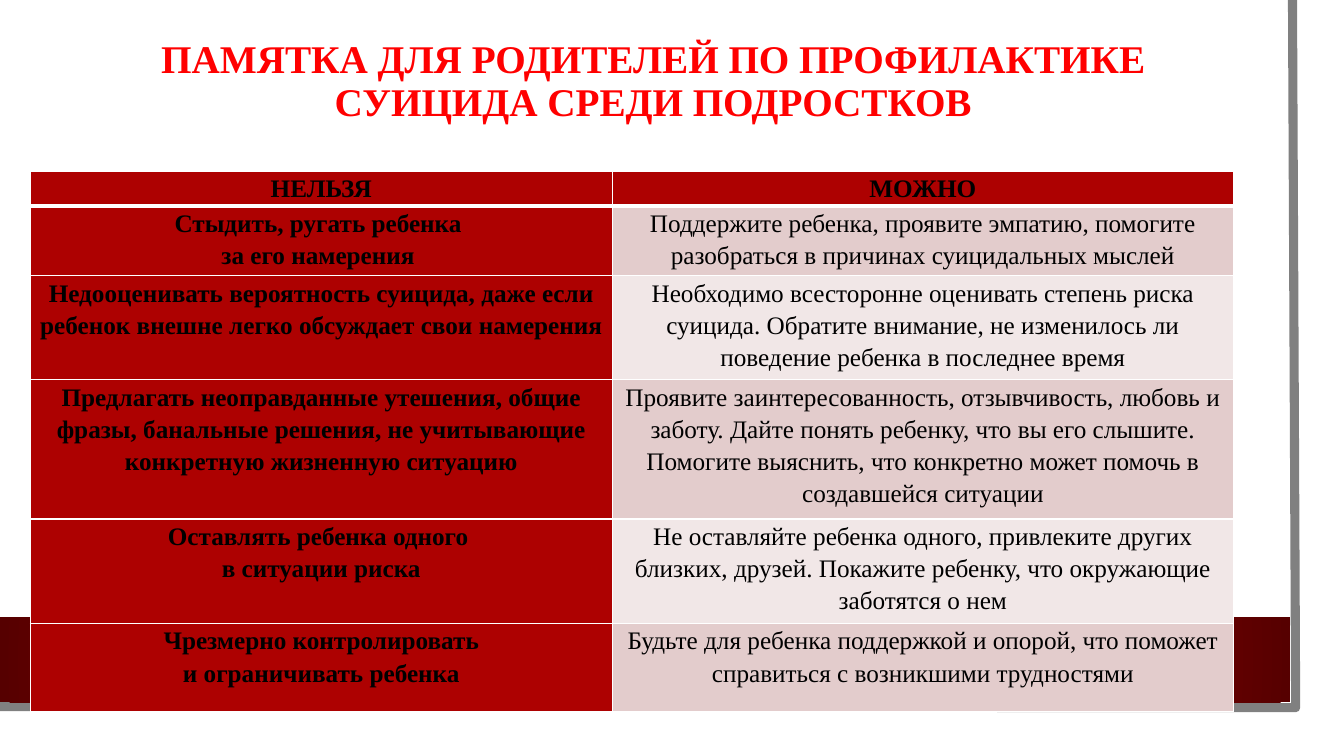
from dataclasses import dataclass

from lxml.etree import SubElement
from pptx import Presentation
from pptx.dml.color import RGBColor
from pptx.enum.shapes import MSO_SHAPE
from pptx.enum.text import MSO_ANCHOR, PP_ALIGN
from pptx.oxml import parse_xml
from pptx.oxml.ns import nsdecls, qn
from pptx.util import Pt

PX = 9525
FONT = "Times New Roman"
RED, DARK, WHITE = "AD0101", "560000", "FFFFFF"
BANDS = ("E3CCCC", "F1E7E7")
WIDTHS = (554, 592)
HIGH = 501


@dataclass
class Row:
    height: int
    avoid: str
    advise: str


HEAD = Row(28, "НЕЛЬЗЯ", "МОЖНО")
ROWS = [
    Row(60, "Стыдить, ругать ребенка \nза его намерения ",
        "Поддержите ребенка, проявите эмпатию, помогите разобраться "
        "в причинах суицидальных мыслей"),
    Row(49, "Недооценивать вероятность суицида, даже если ребенок внешне "
        "легко обсуждает свои намерения",
        "Необходимо всесторонне оценивать степень риска суицида. Обратите "
        "внимание, не изменилось ли поведение ребенка в последнее время"),
    Row(54, "Предлагать неоправданные утешения, общие фразы, банальные "
        "решения, не учитывающие конкретную жизненную ситуацию",
        "Проявите заинтересованность, отзывчивость, любовь и заботу. Дайте "
        "понять ребенку, что вы его слышите. Помогите выяснить, что "
        "конкретно может помочь в создавшейся ситуации"),
    Row(50, "Оставлять ребенка одного \nв ситуации риска",
        "Не оставляйте ребенка одного, привлеките других близких, друзей. "
        "Покажите ребенку, что окружающие заботятся о нем"),
    Row(84, "Чрезмерно контролировать\nи ограничивать ребенка",
        "Будьте для ребенка поддержкой и опорой, что поможет справиться "
        "с возникшими трудностями"),
]


def px(*sizes: int) -> list[int]:
    return [size * PX for size in sizes]


def rgb(code: str) -> RGBColor:
    return RGBColor.from_string(code)


def style(frame, size: int, color: str, bold: bool, gap: float) -> None:
    frame.word_wrap = True
    for para in frame.paragraphs:
        para.alignment = PP_ALIGN.CENTER
        para.line_spacing = gap
        for run in para.runs:
            font = run.font
            font.name, font.size, font.bold = FONT, Pt(size), bold
            font.color.rgb = rgb(color)


def edge(cell, sides: dict[str, int]) -> None:
    """Draw white cell borders; sides maps L, R, T, B to points."""
    props = cell._tc.get_or_add_tcPr()
    for spot, (side, width) in enumerate(sides.items()):
        props.insert(spot, parse_xml(
            f'<a:ln{side} {nsdecls("a")} w="{Pt(width)}"><a:solidFill>'
            f'<a:srgbClr val="{WHITE}"/></a:solidFill></a:ln{side}>'))


def draw_frame(slide) -> None:
    """Draw the grey edge at the right and bottom and the red band."""
    pen = slide.shapes.build_freeform(1231, 0, scale=PX)
    pen.add_line_segments([(1234, 674), (0, 673)], close=False)
    rim = pen.convert_to_shape()
    rim.shadow.inherit = False
    rim.fill.background()
    rim.line.color.rgb = rgb("808080")
    rim.line.width = Pt(6.5)

    band = slide.shapes.add_shape(MSO_SHAPE.RECTANGLE, *px(0, 588, 1229, 81))
    band.shadow.inherit = False
    band.line.fill.background()
    band.fill.gradient()
    for stop, place, color in zip(band.fill.gradient_stops, (0.34, 1), (RED, DARK)):
        stop.position = place
        stop.color.rgb = rgb(color)
    grad = band._element.spPr.find(qn("a:gradFill"))
    grad.remove(grad.find(qn("a:lin")))
    ring = SubElement(grad, qn("a:path"), {"path": "circle"})
    SubElement(ring, qn("a:fillToRect"), dict.fromkeys("ltrb", "50000"))


def draw_title(slide) -> None:
    frame = slide.shapes.add_textbox(*px(76, 36, 1092, 90)).text_frame
    frame.margin_top = 2 * PX
    frame.text = "ПАМЯТКА ДЛЯ РОДИТЕЛЕЙ ПО ПРОФИЛАКТИКЕ СУИЦИДА СРЕДИ ПОДРОСТКОВ"
    style(frame, 28, "FF0000", True, 0.9)


def draw_table(slide) -> None:
    rows = [HEAD, *ROWS]
    holder = slide.shapes.add_table(
        len(rows), 2, *px(29, 163, sum(WIDTHS), HIGH))
    table = holder.table
    for col, width in zip(table.columns, WIDTHS):
        col.width = width * PX
    for i, row in enumerate(rows):
        table.rows[i].height = row.height * PX
        for j, text in enumerate((row.avoid, row.advise)):
            cell = table.cell(i, j)
            strong = i == 0 or j == 0
            cell.text_frame.text = text
            cell.margin_left = cell.margin_right = 5 * PX
            cell.margin_top = cell.margin_bottom = 0
            cell.vertical_anchor = MSO_ANCHOR.TOP
            style(cell.text_frame, 18, "000000", strong, 1.15)
            cell.fill.solid()
            cell.fill.fore_color.rgb = rgb(RED if strong else BANDS[(i - 1) % 2])
            edge(cell, {"L": 1, "R": 1, "T": 3 if i == 1 else 1,
                        "B": 3 if i == 0 else 1})
    holder.height = HIGH * PX


def main() -> None:
    deck = Presentation()
    deck.slide_width, deck.slide_height = px(1280, 720)
    slide = deck.slides.add_slide(deck.slide_layouts[6])
    draw_frame(slide)
    draw_title(slide)
    draw_table(slide)
    deck.save("out.pptx")


if __name__ == "__main__":
    main()
